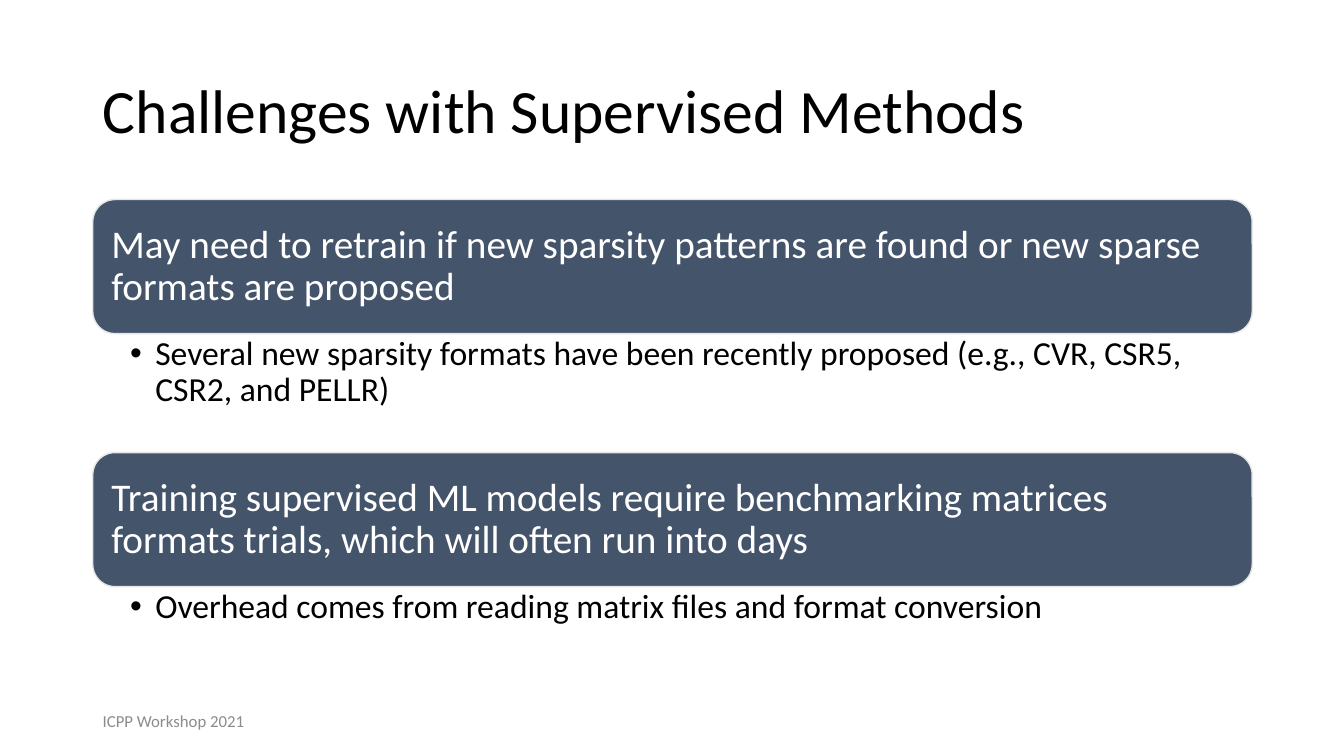
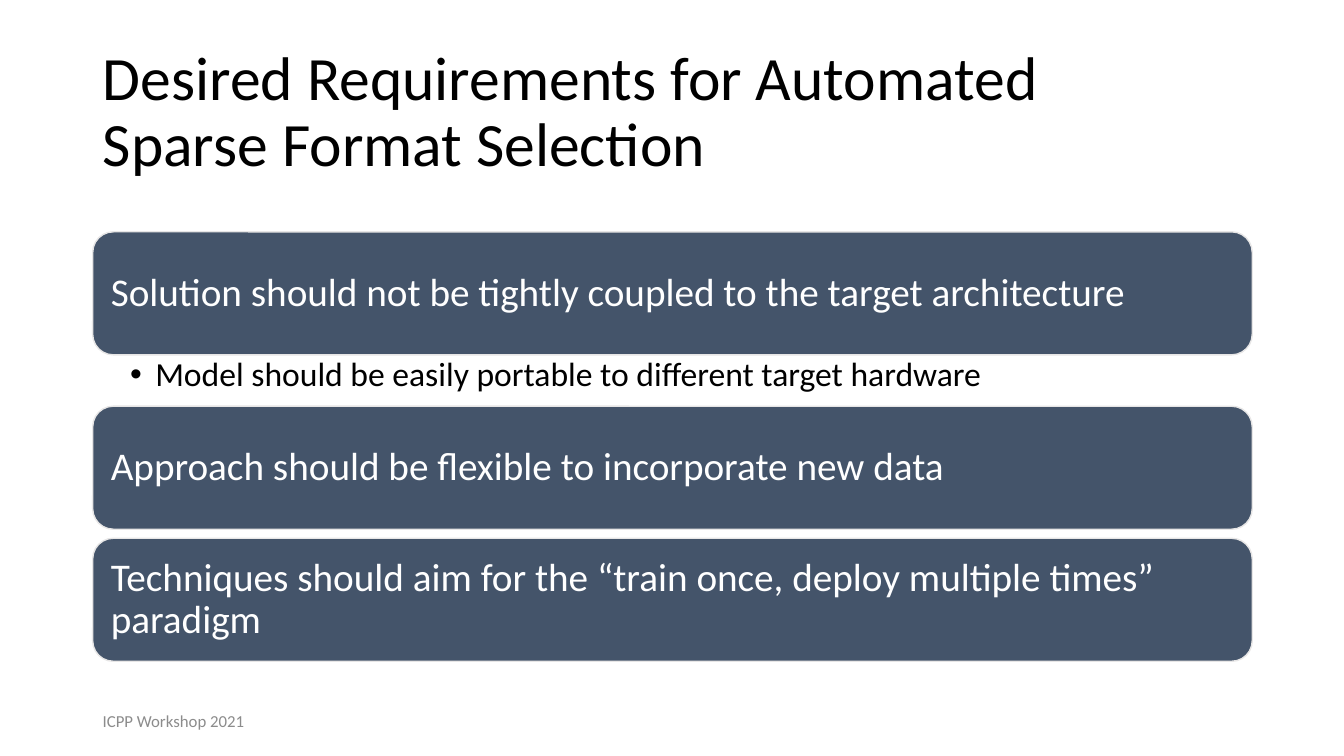
from dataclasses import dataclass

from pptx import Presentation
from pptx.dml.color import RGBColor
from pptx.enum.shapes import MSO_SHAPE
from pptx.enum.text import MSO_ANCHOR, MSO_AUTO_SIZE, PP_ALIGN
from pptx.slide import Slide
from pptx.text.text import TextFrame
from pptx.util import Inches, Pt

# Shared look
COLORS = {
    "text": "000000",
    "band": "44546A",
    "band_line": "E7E6E6",
    "band_text": "FFFFFF",
    "footer": "8C8C8C",
}
FONT = "Calibri"
LEFT, WIDTH = 0.92, 11.5
FOOTER = "ICPP Workshop 2021"
# Template layouts, chosen by the number of lists on a slide
LAYOUT_BY_LIST_COUNT = {1: "Title and Content", 2: "Two Content"}


@dataclass(frozen=True)
class Band:
    heading: str
    space_below: float
    bullet: str = ""


@dataclass(frozen=True)
class BandSlide:
    title: str
    top: float
    band_height: float
    bands: tuple[Band, ...]


SLIDES = (
    BandSlide(
        "Challenges with Supervised Methods", 1.98, 1.33,
        (
            Band("May need to retrain if new sparsity patterns are found "
                 "or new sparse formats are proposed", 1.18,
                 "Several new sparsity formats have been recently proposed "
                 "(e.g., CVR, CSR5, CSR2, and PELLR)"),
            Band("Training supervised ML models require benchmarking matrices "
                 "formats trials, which will often run into days", 1.18,
                 "Overhead comes from reading matrix files and format conversion"),
        ),
    ),
    BandSlide(
        "Desired Requirements for Automated\vSparse Format Selection", 2.3, 1.22,
        (
            Band("Solution should not be tightly coupled to the target architecture", 0.51,
                 "Model should be easily portable to different target hardware"),
            Band("Approach should be flexible to incorporate new data", 0.09),
            Band("Techniques should aim for the “train once, deploy multiple times” "
                 "paradigm", 0),
        ),
    ),
)


def color(name: str) -> RGBColor:
    return RGBColor.from_string(COLORS[name])


def write_text(frame: TextFrame, text: str, *, size: float, color_name: str = "text",
               anchor: MSO_ANCHOR = MSO_ANCHOR.MIDDLE, line_spacing: float = 0.9,
               insets: tuple[float, float, float, float] = (0.1, 0.05, 0.1, 0.05),
               hanging: float = 0) -> None:
    """Write one left-aligned paragraph; insets are left, top, right, bottom."""
    frame.word_wrap = True
    frame.auto_size = MSO_AUTO_SIZE.NONE
    frame.vertical_anchor = anchor
    (frame.margin_left, frame.margin_top,
     frame.margin_right, frame.margin_bottom) = map(Inches, insets)
    frame.text = text
    paragraph = frame.paragraphs[0]
    paragraph.alignment = PP_ALIGN.LEFT
    paragraph.line_spacing = line_spacing
    paragraph.space_before = Pt(0)
    if hanging:
        properties = paragraph._p.get_or_add_pPr()
        properties.set("marL", str(Inches(hanging)))
        properties.set("indent", str(-Inches(hanging)))
    for run in paragraph.runs:
        run.font.name = FONT
        run.font.size = Pt(size)
        run.font.color.rgb = color(color_name)


def place(shape, top: float, height: float) -> None:
    """Move a placeholder into the content column."""
    shape.left, shape.top = Inches(LEFT), Inches(top)
    shape.width, shape.height = Inches(WIDTH), Inches(height)


def add_band(slide: Slide, heading: str, top: float, height: float) -> None:
    shape = slide.shapes.add_shape(MSO_SHAPE.ROUNDED_RECTANGLE, Inches(LEFT), Inches(top),
                                   Inches(WIDTH), Inches(height))
    shape.shadow.inherit = False
    shape.fill.solid()
    shape.fill.fore_color.rgb = color("band")
    shape.line.color.rgb = color("band_line")
    shape.line.width = Pt(1)
    write_text(shape.text_frame, heading, size=28, color_name="band_text",
               insets=(0.12, 0.12, 0.12, 0.12))


def add_footer(slide: Slide) -> None:
    box = slide.shapes.add_textbox(Inches(LEFT), Inches(6.95), Inches(3), Inches(0.4))
    write_text(box.text_frame, FOOTER, size=12, color_name="footer", line_spacing=1.0)


def add_band_slide(presentation, content: BandSlide) -> None:
    list_count = sum(bool(band.bullet) for band in content.bands)
    layout = presentation.slide_layouts.get_by_name(LAYOUT_BY_LIST_COUNT[list_count])
    slide = presentation.slides.add_slide(layout)

    # Title
    title, *bodies = slide.placeholders
    place(title, 0.4, 1.45)
    write_text(title.text_frame, content.title, size=44)

    # Bands stacked downwards, each with its list below
    remaining_bodies = iter(bodies)
    top = content.top
    for band in content.bands:
        add_band(slide, band.heading, top, content.band_height)
        top += content.band_height
        if band.bullet:
            body = next(remaining_bodies)
            place(body, top, band.space_below)
            write_text(body.text_frame, band.bullet, size=24, anchor=MSO_ANCHOR.TOP,
                       insets=(0.37, 0.03, 0.19, 0.03), hanging=0.25)
        top += band.space_below

    add_footer(slide)


def main() -> None:
    presentation = Presentation()
    presentation.slide_width = Inches(13.33)
    presentation.slide_height = Inches(7.5)
    for content in SLIDES:
        add_band_slide(presentation, content)
    presentation.save("out.pptx")


if __name__ == "__main__":
    main()
